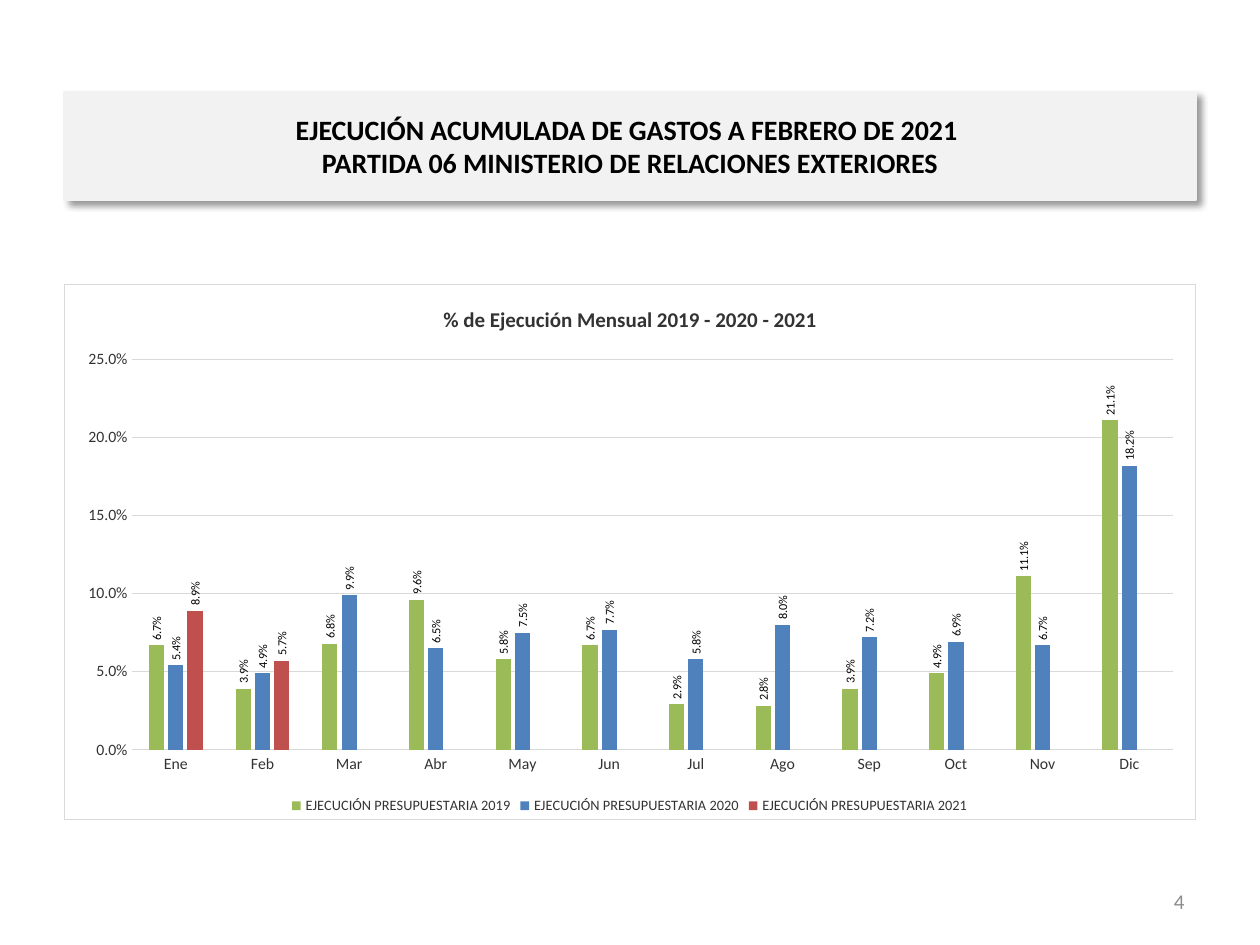
from lxml.etree import SubElement
from pptx import Presentation
from pptx.chart.data import CategoryChartData
from pptx.dml.color import RGBColor
from pptx.enum.chart import XL_CHART_TYPE, XL_LABEL_POSITION, XL_LEGEND_POSITION, XL_TICK_MARK
from pptx.enum.text import MSO_ANCHOR, MSO_AUTO_SIZE, PP_ALIGN
from pptx.oxml import parse_xml
from pptx.oxml.ns import nsdecls, qn
from pptx.util import Pt

THEME = {
    "font": "Calibri",
    "black": "000000", "text": "333333", "muted": "8C8C8C",
    "band": "F2F2F2", "rule": "D9D9D9", "paper": "FFFFFF",
    "heading": 16, "chart_title": 12, "page": 12, "axis": 9, "legend": 8.2, "label": 7,
}
MONTHS = ["Ene", "Feb", "Mar", "Abr", "May", "Jun", "Jul", "Ago", "Sep", "Oct", "Nov", "Dic"]
EXECUTION = [  # year, colour, monthly percentages
    (2019, "9BBB59", [6.7, 3.9, 6.8, 9.6, 5.8, 6.7, 2.9, 2.8, 3.9, 4.9, 11.1, 21.1]),
    (2020, "4F81BD", [5.4, 4.9, 9.9, 6.5, 7.5, 7.7, 5.8, 8.0, 7.2, 6.9, 6.7, 18.2]),
    (2021, "C0504D", [8.9, 5.7] + [None] * 10),
]
PX = 914400 / 126


def px(*lengths):
    return [round(length * PX) for length in lengths]


def write(frame, text, size, color, bold=False, align=PP_ALIGN.CENTER):
    frame.text = text
    paragraph = frame.paragraphs[0]
    paragraph.alignment = align
    for run in paragraph.runs:
        run.font.name = THEME["font"]
        run.font.size = Pt(THEME[size])
        run.font.bold = bold
        run.font.color.rgb = RGBColor.from_string(THEME[color])


rule_color = RGBColor.from_string(THEME["rule"])
prs = Presentation()
prs.slide_width, prs.slide_height = px(1260, 945)
slide = prs.slides.add_slide(prs.slide_layouts[5])

# Page number
page_number = slide.shapes.add_textbox(*px(903, 876, 294, 50))
page_number.text_frame.word_wrap = True
page_number.text_frame.vertical_anchor = MSO_ANCHOR.MIDDLE
write(page_number.text_frame, "4", "page", "muted", align=PP_ALIGN.RIGHT)

# Heading band
heading = slide.shapes.title
heading.left, heading.top, heading.width, heading.height = px(64, 92, 1132, 108)
heading.fill.solid()
heading.fill.fore_color.rgb = RGBColor.from_string(THEME["band"])
heading.line.color.rgb = RGBColor.from_string(THEME["band"])
heading.line.width = Pt(0.75)
heading.text_frame.word_wrap = True
heading.text_frame.auto_size = MSO_AUTO_SIZE.NONE
heading.text_frame.vertical_anchor = MSO_ANCHOR.MIDDLE
write(heading.text_frame,
      "EJECUCIÓN ACUMULADA DE GASTOS A FEBRERO DE 2021 \v"
      "PARTIDA 06 MINISTERIO DE RELACIONES EXTERIORES",
      "heading", "black", bold=True)
heading._element.spPr.append(parse_xml(
    f'<a:effectLst {nsdecls("a")}><a:outerShdw blurRad="{Pt(4)}" dist="{Pt(3)}" '
    'dir="2700000" algn="tl" rotWithShape="0"><a:srgbClr val="000000">'
    '<a:alpha val="40000"/></a:srgbClr></a:outerShdw></a:effectLst>'))

# Monthly execution chart
execution = CategoryChartData(number_format="0.0%")
execution.categories = MONTHS
for year, _, percentages in EXECUTION:
    execution.add_series(f"EJECUCIÓN PRESUPUESTARIA {year}",
                         [None if p is None else round(p / 100, 3) for p in percentages])
chart = slide.shapes.add_chart(XL_CHART_TYPE.COLUMN_CLUSTERED, *px(64, 284, 1132, 536),
                               execution).chart
chart.font.name = THEME["font"]
chart.font.size = Pt(10)
chart.has_title = True
write(chart.chart_title.text_frame, "% de Ejecución Mensual 2019 - 2020 - 2021",
      "chart_title", "text", bold=True)
chart.chart_title.include_in_layout = False

# Columns and their upright labels
columns = chart.plots[0]
columns.gap_width = 219
columns.overlap = -27
columns.vary_by_categories = False
for series, (_, color, _) in zip(columns.series, EXECUTION):
    series.format.fill.solid()
    series.format.fill.fore_color.rgb = RGBColor.from_string(color)
    labels = series.data_labels
    labels.show_value = True
    labels.number_format = "0.0%"
    labels.number_format_is_linked = False
    labels.position = XL_LABEL_POSITION.OUTSIDE_END
    labels.font.name = THEME["font"]
    labels.font.size = Pt(THEME["label"])
    labels.font.color.rgb = RGBColor.from_string(THEME["black"])
    label_body = labels._element.find(qn("c:txPr")).find(qn("a:bodyPr"))
    label_body.set("rot", "-5400000")
    label_body.set("vert", "horz")

# Axes and legend
months, share = chart.category_axis, chart.value_axis
share.minimum_scale, share.maximum_scale, share.major_unit = 0, 0.25, 0.05
share.tick_labels.number_format = "0.0%"
share.tick_labels.number_format_is_linked = False
share.format.line.fill.background()
for line in (months.format.line, share.major_gridlines.format.line):
    line.color.rgb = rule_color
    line.width = Pt(0.75)
for axis in (months, share):
    axis.major_tick_mark = axis.minor_tick_mark = XL_TICK_MARK.NONE
chart.has_legend = True
chart.legend.position = XL_LEGEND_POSITION.BOTTOM
chart.legend.include_in_layout = False
for font, size in ((months.tick_labels.font, "axis"), (share.tick_labels.font, "axis"),
                   (chart.legend.font, "legend")):
    font.name = THEME["font"]
    font.size = Pt(THEME[size])
    font.color.rgb = RGBColor.from_string(THEME["text"])

# Plot area placement, as fractions of the chart
plot_area = chart._chartSpace.chart.plotArea
for old_layout in plot_area.findall(qn("c:layout")):
    plot_area.remove(old_layout)
layout = parse_xml(f'<c:layout {nsdecls("c")}><c:manualLayout/></c:layout>')
plot_area.insert(0, layout)
for tag, value in (("layoutTarget", "inner"), ("xMode", "edge"), ("yMode", "edge"),
                   ("x", 0.06), ("y", 0.14), ("w", 0.92), ("h", 0.73)):
    SubElement(layout[0], qn(f"c:{tag}")).set("val", str(value))

# Chart background and border
chart._chartSpace.find(qn("c:txPr")).addprevious(parse_xml(
    f'<c:spPr {nsdecls("c", "a")}><a:solidFill><a:srgbClr val="{THEME["paper"]}"/></a:solidFill>'
    f'<a:ln w="{Pt(0.75)}"><a:solidFill><a:srgbClr val="{THEME["rule"]}"/></a:solidFill></a:ln>'
    '</c:spPr>'))

prs.save("out.pptx")
